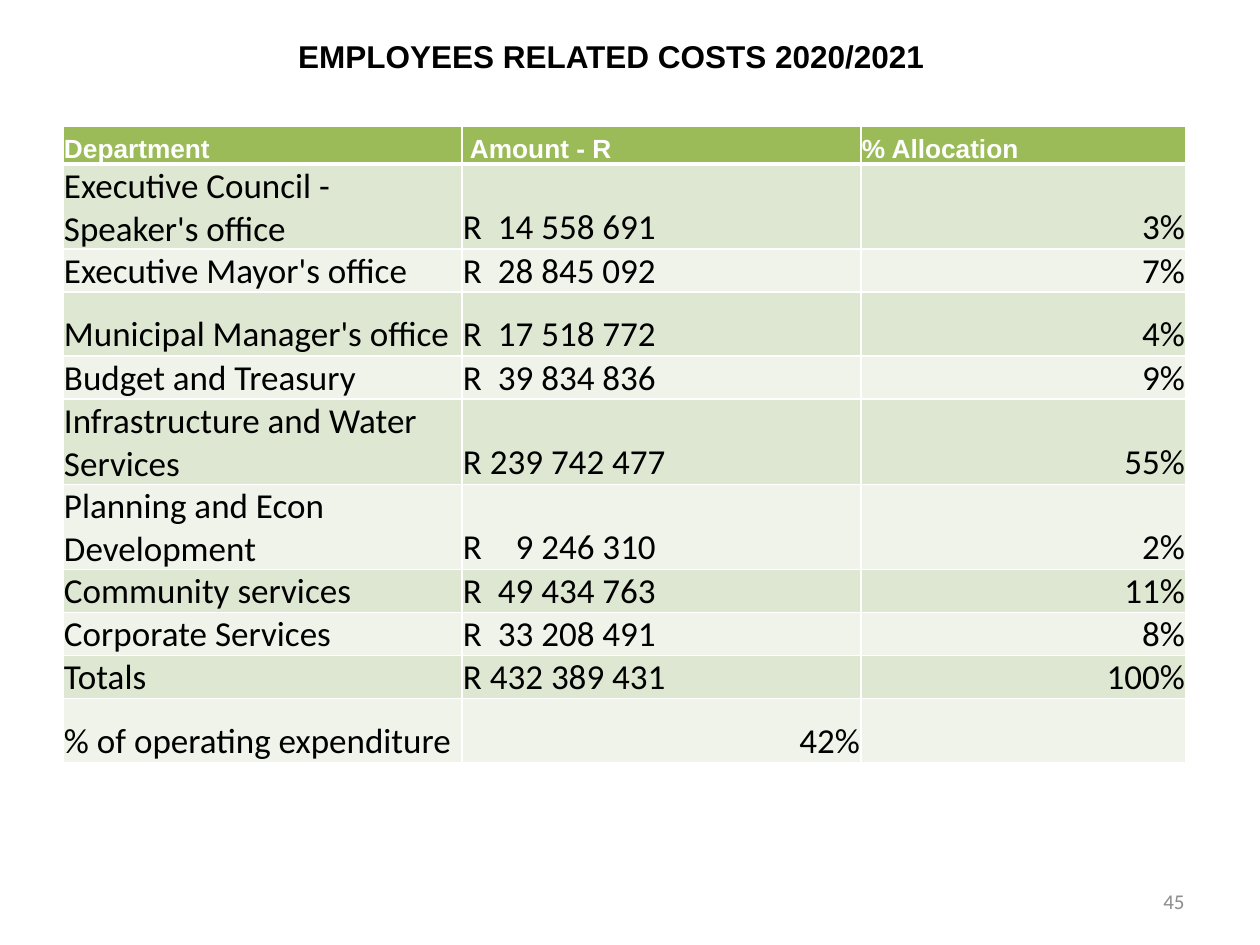
from lxml.etree import SubElement
from pptx import Presentation
from pptx.dml.color import RGBColor
from pptx.enum.text import MSO_ANCHOR as Anchor, PP_ALIGN as Align
from pptx.oxml.ns import qn
from pptx.util import Emu, Pt

BLACK = RGBColor(0x00, 0x00, 0x00)
WHITE = RGBColor(0xFF, 0xFF, 0xFF)
GREY = RGBColor(0x8C, 0x8C, 0x8C)
GREEN = RGBColor(0x9B, 0xBB, 0x59)
BANDS = (RGBColor(0xDE, 0xE7, 0xD1), RGBColor(0xEF, 0xF3, 0xEA))

EMU_PER_PX = 914400 / 126
SHORT_ROW, TALL_ROW = 38, 64
COLUMN_WIDTHS = (399, 399, 325)
AMOUNT_TAB = 193
HEADINGS = ("Department", "Amount - R", "% Allocation")
COSTS = (
    ("Executive Council - Speaker's office", "R\t14 558 691", "3%", TALL_ROW),
    ("Executive Mayor's office", "R\t28 845 092", "7%", SHORT_ROW),
    ("Municipal Manager's office", "R\t17 518 772", "4%", TALL_ROW),
    ("Budget and Treasury", "R\t39 834 836", "9%", SHORT_ROW),
    ("Infrastructure and Water Services", "R 239 742 477", "55%", TALL_ROW),
    ("Planning and Econ Development", "R\t9 246 310", "2%", TALL_ROW),
    ("Community services", "R\t49 434 763", "11%", SHORT_ROW),
    ("Corporate Services", "R\t33 208 491", "8%", SHORT_ROW),
    ("Totals", "R 432 389 431", "100%", SHORT_ROW),
    ("% of operating expenditure", "42%", "", TALL_ROW),
)


def px(length):
    return Emu(round(length * EMU_PER_PX))


def write(frame, text, size=20, font="Calibri", color=BLACK, bold=False, align=Align.LEFT):
    para = frame.paragraphs[0]
    para.alignment = align
    if "\t" in text:
        tabs = SubElement(para._p.get_or_add_pPr(), qn("a:tabLst"))
        SubElement(tabs, qn("a:tab"), pos=str(px(AMOUNT_TAB)), algn="r")
    if not text:
        para.font.size = Pt(size)
        return
    span = para.add_run()
    span.text = text
    span.font.size = Pt(size)
    span.font.name = font
    span.font.bold = bold
    span.font.color.rgb = color


def draw_borders(cell, top=1, bottom=1):
    """Add white borders, widths in points; call before filling the cell."""
    properties = cell._tc.get_or_add_tcPr()
    for side, width in (("L", 1), ("R", 1), ("T", top), ("B", bottom)):
        line = SubElement(properties, qn(f"a:ln{side}"), w=str(Pt(width)))
        SubElement(SubElement(line, qn("a:solidFill")), qn("a:srgbClr"), val=str(WHITE))


class SlideBuilder:
    def __init__(self, deck):
        self.slide = deck.slides.add_slide(deck.slide_layouts[5])

    def title(self, text, left, top, width, height):
        box = self.slide.shapes.title
        box.left, box.top, box.width, box.height = map(px, (left, top, width, height))
        frame = box.text_frame
        frame.word_wrap = True
        frame.vertical_anchor = Anchor.TOP
        frame.margin_right = px(39)
        write(frame, text, size=18, font="Arial", bold=True, align=Align.CENTER)

    def page_number(self, text, left, top, width, height):
        box = self.slide.shapes.add_textbox(*map(px, (left, top, width, height)))
        frame = box.text_frame
        frame.word_wrap = True
        frame.vertical_anchor = Anchor.MIDDLE
        write(frame, text, size=12, color=GREY, align=Align.RIGHT)

    def cell(self, cell, text, fill, top=1, bottom=1, indent=1, **style):
        cell.vertical_anchor = Anchor.BOTTOM
        cell.margin_left = px(indent)
        cell.margin_right = cell.margin_top = px(1)
        cell.margin_bottom = 0
        draw_borders(cell, top, bottom)
        cell.fill.solid()
        cell.fill.fore_color.rgb = fill
        write(cell.text_frame, text, **style)

    def cost_table(self, left, top):
        heights = [SHORT_ROW] + [cost[-1] for cost in COSTS]
        table = self.slide.shapes.add_table(
            len(heights), len(COLUMN_WIDTHS), px(left), px(top),
            px(sum(COLUMN_WIDTHS)), px(sum(heights))).table
        table.horz_banding = False
        for column, width in zip(table.columns, COLUMN_WIDTHS):
            column.width = px(width)
        for row, height in zip(table.rows, heights):
            row.height = px(height)
        for column, heading in enumerate(HEADINGS):
            self.cell(table.cell(0, column), heading, GREEN, bottom=3,
                      indent=8 if column == 1 else 1,
                      size=15, font="Arial", color=WHITE, bold=True)
        for row, (*texts, _) in enumerate(COSTS, start=1):
            for column, text in enumerate(texts):
                self.cell(table.cell(row, column), text, BANDS[(row - 1) % 2],
                          top=3 if row == 1 else 1,
                          align=Align.RIGHT if text.endswith("%") else Align.LEFT)


def main():
    deck = Presentation()
    deck.slide_width, deck.slide_height = px(1260), px(945)
    page = SlideBuilder(deck)
    page.title("EMPLOYEES RELATED COSTS 2020/2021", 199, 31, 851, 82)
    page.page_number("45", 903, 876, 294, 50)
    page.cost_table(63, 126)
    deck.save("out.pptx")


if __name__ == "__main__":
    main()
